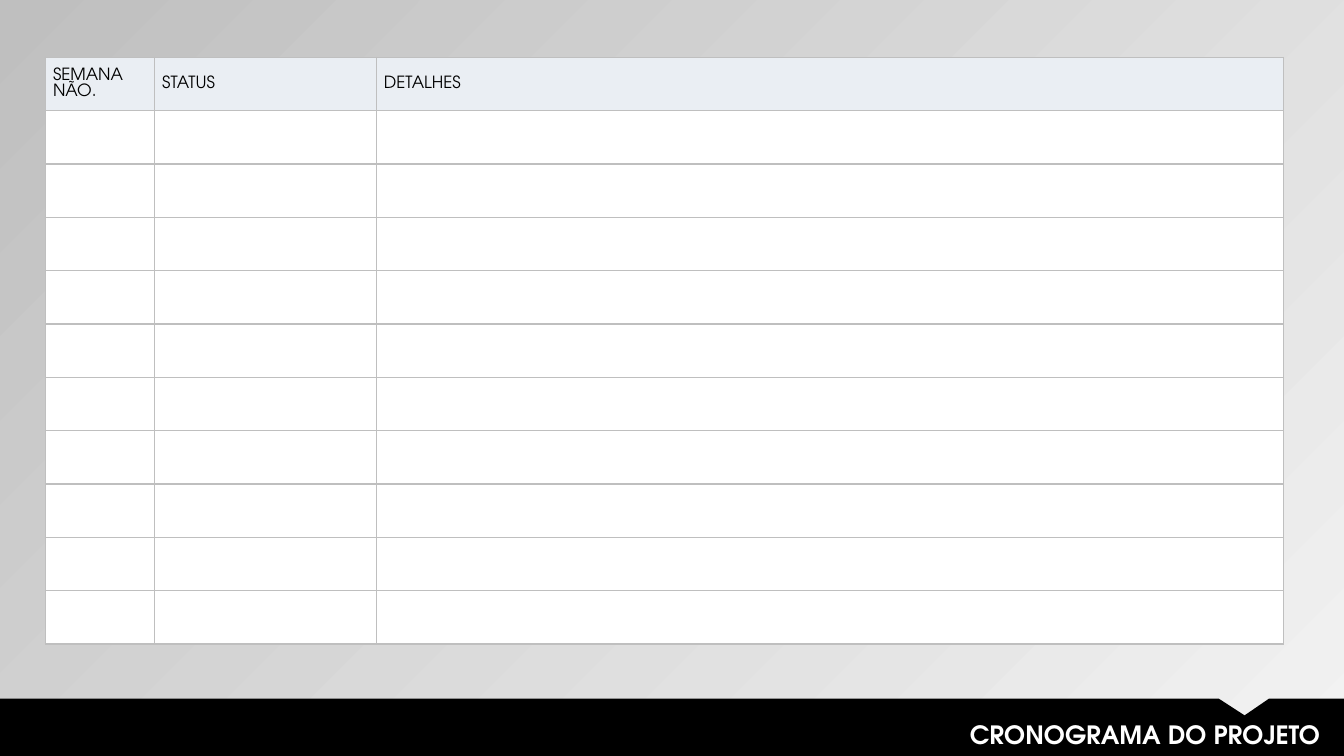
from lxml import etree
from pptx import Presentation
from pptx.dml.color import RGBColor
from pptx.enum.text import MSO_ANCHOR, MSO_AUTO_SIZE, PP_ALIGN
from pptx.oxml.ns import qn
from pptx.util import Pt

FONT = "TeX Gyre Adventor"
BLACK = RGBColor(0x00, 0x00, 0x00)
WHITE = RGBColor(0xFF, 0xFF, 0xFF)
HEADER_FILL = RGBColor(0xEA, 0xEE, 0xF3)
LIGHT_GREY = RGBColor(0xF2, 0xF2, 0xF2)
MID_GREY = RGBColor(0xBF, 0xBF, 0xBF)

SLIDE_WIDTH, SLIDE_HEIGHT = 960, 540
HEADERS = ["SEMANA NÃO.", "STATUS", "DETALHES"]
COLUMN_WIDTHS = [78, 158.4, 648]
ROW_COUNT, ROW_HEIGHT = 11, 38.1
BANNER_TOP = 499


def style_paragraph(paragraph, size, color, bold=False):
    font = paragraph.font
    font.name = FONT
    font.size = Pt(size)
    font.bold = bold
    font.color.rgb = color


def set_background(slide):
    fill = slide.background.fill
    fill.gradient()
    fill.gradient_angle = 135
    for stop, color in zip(fill.gradient_stops, (LIGHT_GREY, MID_GREY)):
        stop.color.rgb = color


def add_cell_borders(cell):
    """Put a 1 pt grey line on all four sides; call before filling the cell."""
    properties = cell._tc.get_or_add_tcPr()
    for side in ("a:lnL", "a:lnR", "a:lnT", "a:lnB"):
        line = etree.SubElement(properties, qn(side), w=str(Pt(1)))
        solid = etree.SubElement(line, qn("a:solidFill"))
        etree.SubElement(solid, qn("a:srgbClr"), val=str(MID_GREY))


def fill_cell(cell, color):
    cell.fill.solid()
    cell.fill.fore_color.rgb = color


def write_header(cell, text):
    cell.text = text
    cell.vertical_anchor = MSO_ANCHOR.MIDDLE
    cell.margin_left = cell.margin_right = Pt(5.4)
    cell.margin_top = cell.margin_bottom = 0
    style_paragraph(cell.text_frame.paragraphs[0], 12, BLACK)


def add_schedule_table(slide):
    table = slide.shapes.add_table(
        ROW_COUNT, len(HEADERS), Pt(32.5), Pt(41),
        Pt(sum(COLUMN_WIDTHS)), Pt(ROW_COUNT * ROW_HEIGHT)).table
    for column, width in zip(table.columns, COLUMN_WIDTHS):
        column.width = Pt(width)
    for row in table.rows:
        row.height = Pt(ROW_HEIGHT)
    for cell in table.iter_cells():
        add_cell_borders(cell)
        fill_cell(cell, WHITE)
    for cell, text in zip(table.rows[0].cells, HEADERS):
        fill_cell(cell, HEADER_FILL)
        write_header(cell, text)


def add_notched_banner(slide):
    builder = slide.shapes.build_freeform(0, Pt(BANNER_TOP))
    outline = [(870.5, BANNER_TOP), (889, 511), (906.5, BANNER_TOP),
               (SLIDE_WIDTH, BANNER_TOP), (SLIDE_WIDTH, SLIDE_HEIGHT),
               (0, SLIDE_HEIGHT)]
    builder.add_line_segments([(Pt(x), Pt(y)) for x, y in outline], close=True)
    banner = builder.convert_to_shape()
    banner.shadow.inherit = False
    banner.fill.solid()
    banner.fill.fore_color.rgb = BLACK
    banner.line.fill.background()


def add_title(slide, text):
    frame = slide.shapes.add_textbox(Pt(298), Pt(510), Pt(652), Pt(29)).text_frame
    frame.word_wrap = True
    frame.auto_size = MSO_AUTO_SIZE.SHAPE_TO_FIT_TEXT
    paragraph = frame.paragraphs[0]
    paragraph.text = text
    paragraph.alignment = PP_ALIGN.RIGHT
    style_paragraph(paragraph, 18, WHITE, bold=True)


def main():
    presentation = Presentation()
    presentation.slide_width = Pt(SLIDE_WIDTH)
    presentation.slide_height = Pt(SLIDE_HEIGHT)
    slide = presentation.slides.add_slide(presentation.slide_layouts[6])
    set_background(slide)
    add_schedule_table(slide)
    add_notched_banner(slide)
    add_title(slide, "CRONOGRAMA DO PROJETO")
    presentation.save("out.pptx")


if __name__ == "__main__":
    main()
